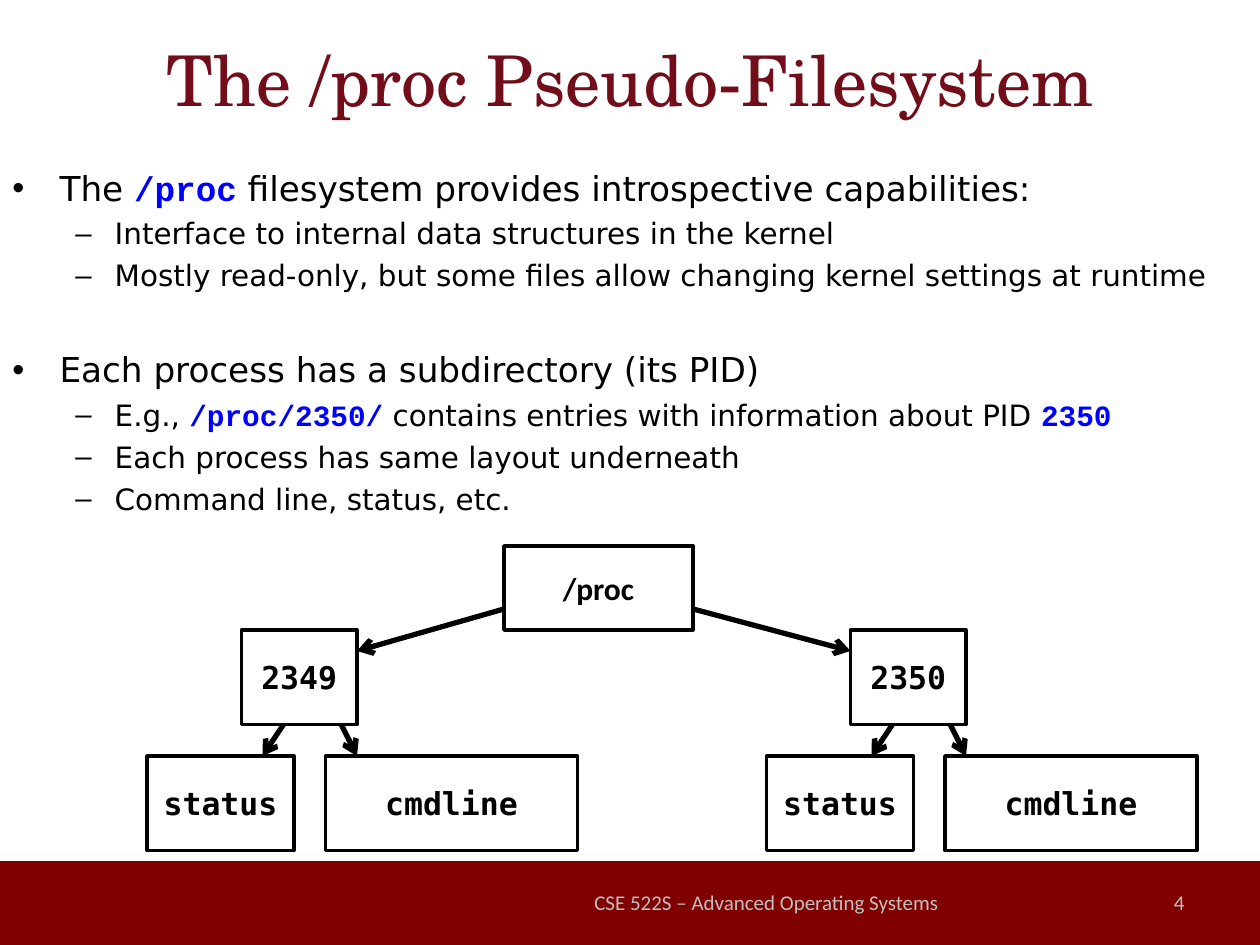
from lxml import etree
from pptx import Presentation
from pptx.dml.color import RGBColor
from pptx.enum.shapes import MSO_CONNECTOR, MSO_SHAPE
from pptx.enum.text import MSO_ANCHOR, PP_ALIGN
from pptx.oxml.ns import qn
from pptx.util import Pt

RECT, LINE = MSO_SHAPE.RECTANGLE, MSO_CONNECTOR.STRAIGHT
TOP, MIDDLE = MSO_ANCHOR.TOP, MSO_ANCHOR.MIDDLE
LEFT, CENTER, RIGHT = PP_ALIGN.LEFT, PP_ALIGN.CENTER, PP_ALIGN.RIGHT
COLORS = {"title": "720D1A", "band": "800000", "footer": "BFBFBF",
          "ink": "000000", "code": "0000FF", "paper": "FFFFFF"}
SANS, MONO, CODE = "DejaVu Sans", "DejaVu Sans Mono", "Courier New"
LEVELS = [{"size": 19.6, "margin": 27, "indent": -27, "bullet": "•"},
          {"size": 16.8, "margin": 58.5, "indent": -22.5, "bullet": "–"}]
BULLETS = [
    (0, ["The ", "/proc", " filesystem provides introspective capabilities:"], 0),
    (1, ["Interface to internal data structures in the kernel"], 3.9),
    (1, ["Mostly read-only, but some files allow changing kernel settings at runtime"], 3.9),
    (0, ["Each process has a subdirectory (its PID)"], 32),
    (1, ["E.g., ", "/proc/2350/", " contains entries with information about PID ", "2350"], 3.9),
    (1, ["Each process has same layout underneath"], 3.9),
    (1, ["Command line, status, etc."], 3.9),
]


def rgb(name):
    """Return the named colour."""
    return RGBColor.from_string(COLORS[name])


def add_run(p, text, size=18, font=SANS, color="ink", bold=False):
    """Add formatted text to a paragraph."""
    r = p.add_run()
    r.text = text
    r.font.size, r.font.name, r.font.bold = Pt(size), font, bold
    r.font.color.rgb = rgb(color)


def set_frame(tf, anchor=MIDDLE, inset=7.2):
    """Set wrapping, anchor and side insets of a text frame."""
    tf.word_wrap = True
    tf.vertical_anchor = anchor
    tf.margin_left = tf.margin_right = Pt(inset)


def add_text(s, box, text, align=CENTER, **fmt):
    """Add a one-line text box."""
    tf = s.shapes.add_textbox(*map(Pt, box)).text_frame
    set_frame(tf)
    p = tf.paragraphs[0]
    p.alignment = align
    add_run(p, text, **fmt)


def add_bullets(s, box):
    """Add the two-level bullet list, with paths and PIDs set as code."""
    tf = s.shapes.add_textbox(*map(Pt, box)).text_frame
    set_frame(tf, TOP)
    for i, (level, parts, before) in enumerate(BULLETS):
        p = tf.add_paragraph() if i else tf.paragraphs[0]
        style = LEVELS[level]
        p.level, p.alignment = level, LEFT
        if before:
            p.space_before = Pt(before)
        pPr = p._p.get_or_add_pPr()
        pPr.set("marL", str(Pt(style["margin"])))
        pPr.set("indent", str(Pt(style["indent"])))
        etree.SubElement(pPr, qn("a:buFont"), typeface="Arial")
        etree.SubElement(pPr, qn("a:buChar"), char=style["bullet"])
        for j, text in enumerate(parts):
            look = {"font": CODE, "color": "code", "bold": True} if j % 2 else {}
            add_run(p, text, size=style["size"], **look)


def add_rect(s, box, fill, line=None):
    """Add a plain rectangle."""
    sp = s.shapes.add_shape(RECT, *map(Pt, box))
    sp.shadow.inherit = False
    sp.fill.solid()
    sp.fill.fore_color.rgb = rgb(fill)
    if line:
        sp.line.color.rgb, sp.line.width = rgb(line), Pt(2)
    else:
        sp.line.fill.background()
    return sp


def add_node(s, box, text, font=MONO):
    """Add a labelled box of the tree."""
    tf = add_rect(s, box, "paper", "ink").text_frame
    set_frame(tf, inset=0)
    tf.paragraphs[0].alignment = CENTER
    add_run(tf.paragraphs[0], text, font=font, bold=True)


def add_arrow(s, x1, y1, x2, y2):
    """Add an arrow between two points."""
    c = s.shapes.add_connector(LINE, *map(Pt, (x1, y1, x2, y2)))
    c.line.color.rgb, c.line.width = rgb("ink"), Pt(3)
    etree.SubElement(c.line._get_or_add_ln(), qn("a:tailEnd"), type="arrow")
    etree.SubElement(c._element.spPr, qn("a:effectLst"))


def add_process(s, x, y, pid, pid_dx):
    """Add a PID node with its two entries below."""
    px = x + pid_dx
    add_node(s, (px, y, 66, 54), pid)
    add_node(s, (x, y + 72, 84, 54), "status")
    add_node(s, (x + 102, y + 72, 144, 54), "cmdline")
    for start, end in ((24, 12), (57, 66)):
        add_arrow(s, px + start, y + 54, px + end, y + 72)


def add_tree(s, x, y):
    """Add the /proc tree from its top left corner."""
    add_node(s, (x + 204, y, 108, 48), "/proc", font="Calibri")
    add_process(s, x, y + 48, "2349", 54)
    add_process(s, x + 354, y + 48, "2350", 48)
    add_arrow(s, x + 204, y + 36, x + 120, y + 60)
    add_arrow(s, x + 312, y + 36, x + 402, y + 60)


def add_footer(s, x, y, w, h):
    """Add the bottom band with course name and slide number."""
    add_rect(s, (x, y, w, h), "band")
    look = {"size": 12, "font": "Calibri", "color": "footer"}
    add_text(s, (x + 324, y + 9, 228, 28.8),
             "CSE 522S – Advanced Operating Systems", **look)
    add_text(s, (x + 516, y + 9, 168, 28.8), "4", align=RIGHT, **look)


def main():
    """Build and save the slide."""
    prs = Presentation()
    prs.slide_width, prs.slide_height = Pt(720), Pt(540)
    s = prs.slides.add_slide(prs.slide_layouts[6])
    add_footer(s, 0, 492, 720, 48)
    add_text(s, (36, 0, 648, 90), "The /proc Pseudo-Filesystem",
             size=40, font="TeX Gyre Schola", color="title")
    add_bullets(s, (0, 92, 720, 238))
    add_tree(s, 84, 312)
    prs.save("out.pptx")


if __name__ == "__main__":
    main()
